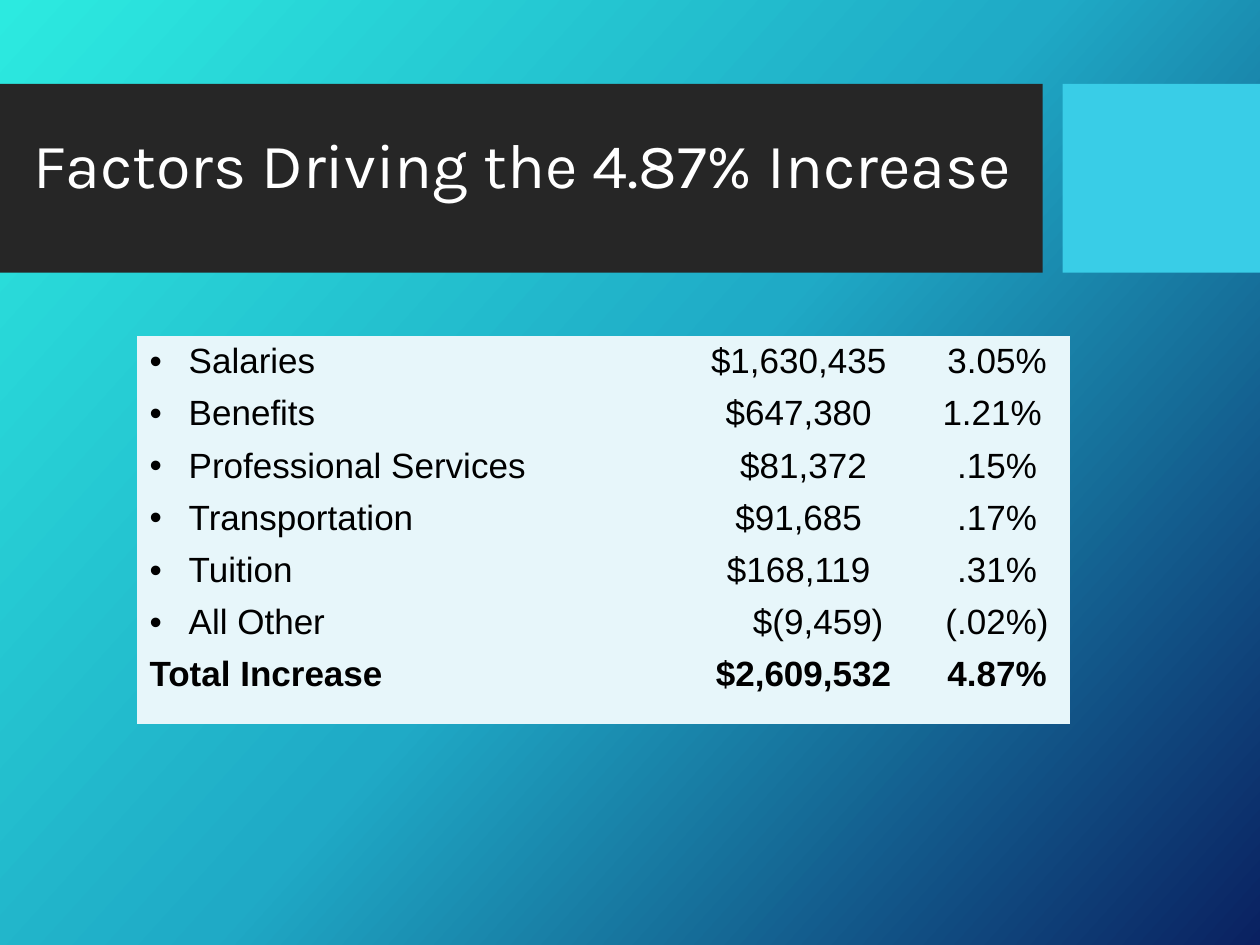
from copy import deepcopy
from dataclasses import dataclass

from lxml import etree
from pptx import Presentation
from pptx.dml.color import RGBColor
from pptx.enum.shapes import MSO_SHAPE
from pptx.enum.text import MSO_ANCHOR, MSO_AUTO_SIZE, PP_ALIGN
from pptx.oxml.ns import qn
from pptx.util import Cm, Pt

RECT = MSO_SHAPE.RECTANGLE
MIDDLE = MSO_ANCHOR.MIDDLE
NO_FIT = MSO_AUTO_SIZE.NONE
LEFT, CENTER = PP_ALIGN.LEFT, PP_ALIGN.CENTER
PLAIN_GRID = "{2D5ABB26-0587-4C30-8999-92F81FD0307C}"


@dataclass(frozen=True)
class Theme:
    glow: tuple = ((0, "2CEAE0"), (0.5, "1FAAC6"), (1, "0A2161"))
    angle: int = 42
    band: str = "262626"
    accent: str = "39CDE7"
    panel: str = "E7F6FA"
    ink: str = "000000"
    light: str = "FFFFFF"
    head_font: str = "Karla"
    body_font: str = "Arial"
    head_size: int = 36
    body_size: int = 20


THEME = Theme()
COLS = (11, 4.88, 2.92)
ROW, LAST = 1.05, 1.52
HANG = 0.79
NUDGE = 0.59  # keeps the negative amount right of centre
ITEMS = (
    ("Salaries", "$1,630,435 ", "3.05%"),
    ("Benefits", "$647,380 ", "1.21% "),
    ("Professional Services", "$81,372", ".15%"),
    ("Transportation", "$91,685 ", ".17%"),
    ("Tuition", "$168,119 ", ".31%"),
    ("All Other", "$(9,459)", "(.02%)"),
    ("Total Increase", "$2,609,532", "4.87%"),
)


def rgb(code):
    return RGBColor.from_string(code)


def style(para, font, size, color, bold=False):
    para.font.name = font
    para.font.size = Pt(size)
    para.font.bold = bold
    para.font.color.rgb = rgb(color)


def shade(slide):
    """Fill the background with the three-colour gradient."""
    fill = slide.background.fill
    fill.gradient()
    fill.gradient_angle = 360 - THEME.angle
    stops = slide.element.find(".//" + qn("a:gsLst"))
    stops.append(deepcopy(stops[-1]))
    for stop, (pos, color) in zip(fill.gradient_stops, THEME.glow):
        stop.position = pos
        stop.color.rgb = rgb(color)


def add_band(slide, left, width, color):
    band = slide.shapes.add_shape(RECT, Cm(left), Cm(1.69), Cm(width), Cm(3.81))
    band.shadow.inherit = False
    band.fill.solid()
    band.fill.fore_color.rgb = rgb(color)
    band.line.fill.background()


def set_title(slide, text):
    title = slide.shapes.title
    title.left, title.top = Cm(0.43), Cm(2.11)
    title.width, title.height = Cm(22.86), Cm(2.54)
    frame = title.text_frame
    frame.text = text
    frame.auto_size = NO_FIT
    frame.vertical_anchor = MIDDLE
    para = frame.paragraphs[0]
    para.alignment = LEFT
    para.line_spacing = 0.9
    style(para, THEME.head_font, THEME.head_size, THEME.light)
    # Bring the title in front of the bands
    slide.shapes.element.append(title.element)


def indent(para, left, first=0):
    props = para._p.get_or_add_pPr()
    props.set("marL", str(Cm(left)))
    props.set("indent", str(Cm(first)))
    return props


def add_bullet(para):
    props = indent(para, HANG, -HANG)
    color = etree.SubElement(props, qn("a:buClr"))
    etree.SubElement(color, qn("a:srgbClr"), val=THEME.ink)
    etree.SubElement(props, qn("a:buFont"), typeface=THEME.body_font)
    etree.SubElement(props, qn("a:buChar"), char="•")


def fill_cell(cell, text, col, total):
    cell.fill.solid()
    cell.fill.fore_color.rgb = rgb(THEME.panel)
    cell.text = text
    para = cell.text_frame.paragraphs[0]
    if col:
        para.alignment = CENTER
    elif not total:
        add_bullet(para)
    if text.startswith("$("):
        indent(para, NUDGE)
    style(para, THEME.body_font, THEME.body_size, THEME.ink, total)


def add_costs(slide):
    count = len(ITEMS)
    high = ROW * (count - 1) + LAST
    frame = slide.shapes.add_table(
        count, len(COLS), Cm(2.76), Cm(6.77), Cm(sum(COLS)), Cm(high))
    table = frame.table
    table.first_row = table.horz_banding = False
    table._tbl.tblPr.find(qn("a:tableStyleId")).text = PLAIN_GRID
    for col, width in zip(table.columns, COLS):
        col.width = Cm(width)
    for r, item in enumerate(ITEMS):
        total = r == count - 1
        table.rows[r].height = Cm(LAST if total else ROW)
        for c, text in enumerate(item):
            fill_cell(table.cell(r, c), text, c, total)


def main():
    deck = Presentation()
    deck.slide_width, deck.slide_height = Cm(25.4), Cm(19.05)
    slide = deck.slides.add_slide(deck.slide_layouts[5])
    shade(slide)
    # Header bands and title
    add_band(slide, 0, 21.02, THEME.band)
    add_band(slide, 21.42, 3.98, THEME.accent)
    set_title(slide, "Factors Driving the 4.87% Increase")
    # Cost factors
    add_costs(slide)
    deck.save("out.pptx")


if __name__ == "__main__":
    main()
